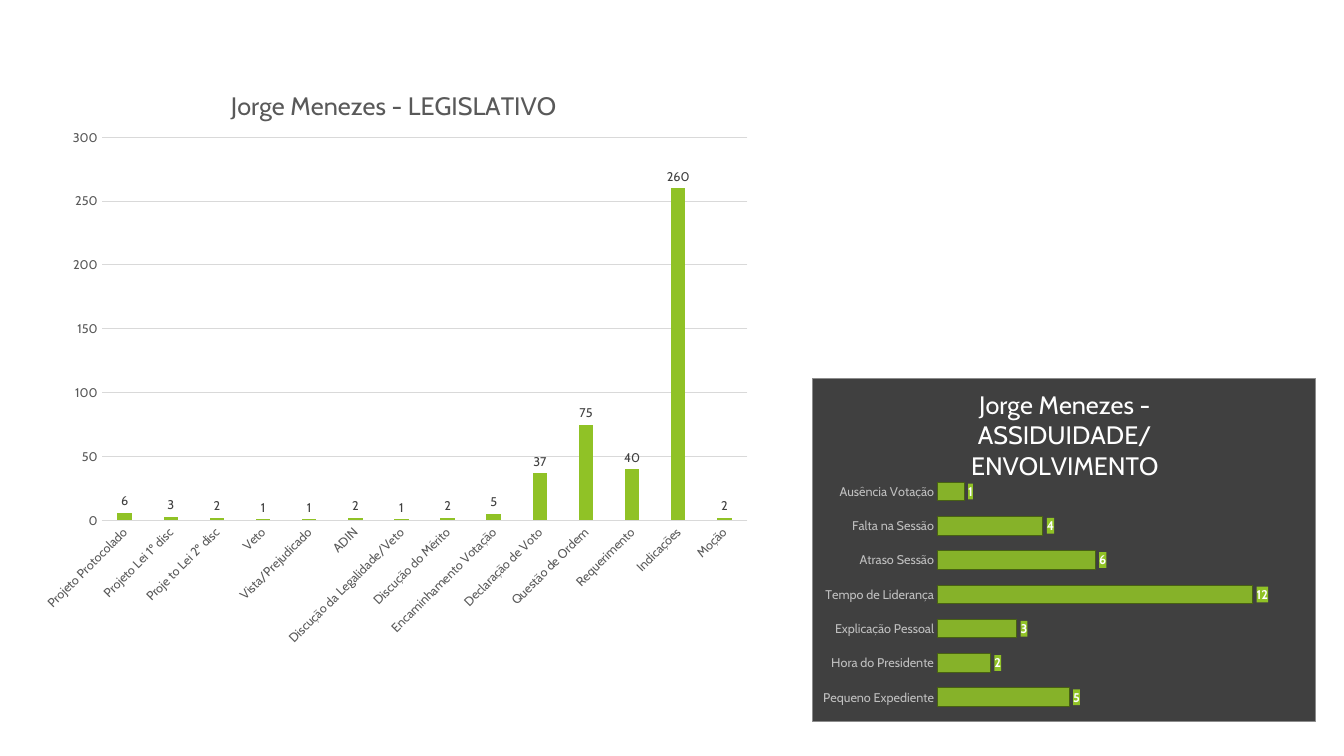
from dataclasses import dataclass

from lxml import etree
from pptx import Presentation
from pptx.chart.data import CategoryChartData
from pptx.dml.color import RGBColor
from pptx.enum.chart import XL_CHART_TYPE as ChartType
from pptx.enum.chart import XL_LABEL_POSITION as LabelPos
from pptx.enum.chart import XL_TICK_MARK as Tick
from pptx.oxml import parse_xml
from pptx.oxml.ns import nsdecls, qn
from pptx.util import Inches, Pt

# Content
LEGISLATIVE = {
    "title": ["Jorge Menezes - LEGISLATIVO"],
    "data": [
        ("Projeto Protocolado", 6), ("Projeto Lei 1º disc", 3),
        ("Proje to Lei 2º disc", 2), ("Veto", 1), ("Vista/Prejudicado", 1),
        ("ADIN", 2), ("Discução da Legalidade/Veto", 1),
        ("Discução do Mérito", 2), ("Encaminhamento Votação", 5),
        ("Declaração de Voto", 37), ("Questão de Ordem", 75),
        ("Requerimento", 40), ("Indicações", 260), ("Moção", 2),
    ],
    "box": (0.28, 0.59, 7.28, 5.94),
    "title_at": (0.27, 0.04),
    "plot": (0.1, 0.13, 0.88, 0.64),
}
ATTENDANCE = {
    "title": ["Jorge Menezes -", "ASSIDUIDADE/", "ENVOLVIMENTO"],
    "data": [
        ("Pequeno Expediente", 5), ("Hora do Presidente", 2),
        ("Explicação Pessoal", 3), ("Tempo de Liderança", 12),
        ("Atraso Sessão", 6), ("Falta na Sessão", 4), ("Ausência Votação", 1),
    ],
    "box": (8.05, 3.75, 5, 3.41),
    "title_at": (0.31, 0.02),
    "plot": (0.25, 0.28, 0.73, 0.7),
}


@dataclass(frozen=True)
class Theme:
    font: str = "Cabin"
    green: str = "90C226"
    dark_green: str = "486113"
    dark: str = "404040"
    text: str = "595959"
    grid: str = "D9D9D9"
    border: str = "8C8C8C"
    light: str = "BFBFBF"
    white: str = "FFFFFF"
    title_size: int = 18
    label_size: int = 9


THEME = Theme()


def style_font(font, color, size=THEME.label_size, bold=False):
    font.name, font.size, font.bold = THEME.font, Pt(size), bold
    font.color.rgb = RGBColor.from_string(color)


def style_line(line, color, width=0.75):
    line.color.rgb = RGBColor.from_string(color)
    line.width = Pt(width)


def add_title(chart, lines, color):
    tf = chart.chart_title.text_frame
    for i, text in enumerate(lines):
        p = tf.paragraphs[0] if i == 0 else tf.add_paragraph()
        r = p.add_run()
        r.text = text
        style_font(r.font, color, size=THEME.title_size)


def layout_xml(x, y, w=None, h=None):
    """Manual layout in fractions of the chart; a size means an inner plot area."""
    parts = [("xMode", "edge"), ("yMode", "edge"), ("x", x), ("y", y)]
    if w is not None:
        parts = [("layoutTarget", "inner")] + parts + [("w", w), ("h", h)]
    body = "".join(f'<c:{tag} val="{val}"/>' for tag, val in parts)
    return parse_xml(f'<c:layout {nsdecls("c")}><c:manualLayout>{body}'
                     '</c:manualLayout></c:layout>')


def set_layout(parent, index, layout):
    for old in parent.findall(qn("c:layout")):
        parent.remove(old)
    parent.insert(index, layout)


def fill_xml(color, line=""):
    return parse_xml(f'<c:spPr {nsdecls("c", "a")}><a:solidFill>'
                     f'<a:srgbClr val="{color}"/></a:solidFill>{line}</c:spPr>')


def add_bars(slide, content, kind, gap, overlap, title_color, axis_color,
             label_color, label_bold, top_value):
    data = CategoryChartData(number_format="0")
    names, values = zip(*content["data"])
    data.categories = names
    data.add_series("Series 1", values)
    box = [Inches(v) for v in content["box"]]
    chart = slide.shapes.add_chart(kind, *box, data).chart
    chart.has_legend = False
    style_font(chart.font, "000000", size=10)

    # Title and plot area
    add_title(chart, content["title"], title_color)
    set_layout(chart.chart_title._element, 1, layout_xml(*content["title_at"]))
    plot_area = chart._chartSpace.find(f'{qn("c:chart")}/{qn("c:plotArea")}')
    set_layout(plot_area, 0, layout_xml(*content["plot"]))

    # Axes
    for axis in (chart.category_axis, chart.value_axis):
        axis.major_tick_mark = axis.minor_tick_mark = Tick.NONE
        axis.has_major_gridlines = False
        axis.format.line.fill.background()
        style_font(axis.tick_labels.font, axis_color)
    chart.value_axis.minimum_scale = 0
    chart.value_axis.maximum_scale = top_value

    # Bars and value labels
    plot = chart.plots[0]
    plot.gap_width, plot.overlap, plot.vary_by_categories = gap, overlap, False
    series = plot.series[0]
    series.format.fill.solid()
    series.format.fill.fore_color.rgb = RGBColor.from_string(THEME.green)
    labels = series.data_labels
    labels.show_value = True
    labels.number_format, labels.number_format_is_linked = "0", False
    labels.position = LabelPos.OUTSIDE_END
    style_font(labels.font, label_color, bold=label_bold)
    return chart


prs = Presentation()
prs.slide_width, prs.slide_height = Inches(13.33), Inches(7.5)
slide = prs.slides.add_slide(prs.slide_layouts[6])

# Legislative columns
columns = add_bars(slide, LEGISLATIVE, ChartType.COLUMN_CLUSTERED, 219, -27,
                   THEME.text, THEME.text, THEME.dark, False, 300)
columns.value_axis.major_unit = 50
columns.value_axis.has_major_gridlines = True
style_line(columns.value_axis.major_gridlines.format.line, THEME.grid)
style_line(columns.category_axis.format.line, THEME.grid)
body = columns.category_axis._element.find(f'{qn("c:txPr")}/{qn("a:bodyPr")}')
body.set("rot", "-2700000")
body.set("vert", "horz")

# Attendance bars on a dark panel
bars = add_bars(slide, ATTENDANCE, ChartType.BAR_CLUSTERED, 84, 0,
                THEME.white, THEME.light, THEME.white, True, 14)
bars.value_axis.visible = False
series = bars.plots[0].series[0]
style_line(series.format.line, THEME.dark_green)
bar_color = series._element.find(
    f'{qn("c:spPr")}/{qn("a:solidFill")}/{qn("a:srgbClr")}')
etree.SubElement(bar_color, qn("a:alpha")).set("val", "88000")
series.data_labels._element.find(qn("c:txPr")).addprevious(fill_xml(THEME.green))
border = (f'<a:ln w="{Pt(0.5)}"><a:solidFill><a:srgbClr val="{THEME.border}"/>'
          '</a:solidFill></a:ln>')
bars._chartSpace.find(qn("c:txPr")).addprevious(fill_xml(THEME.dark, border))

prs.save("out.pptx")
